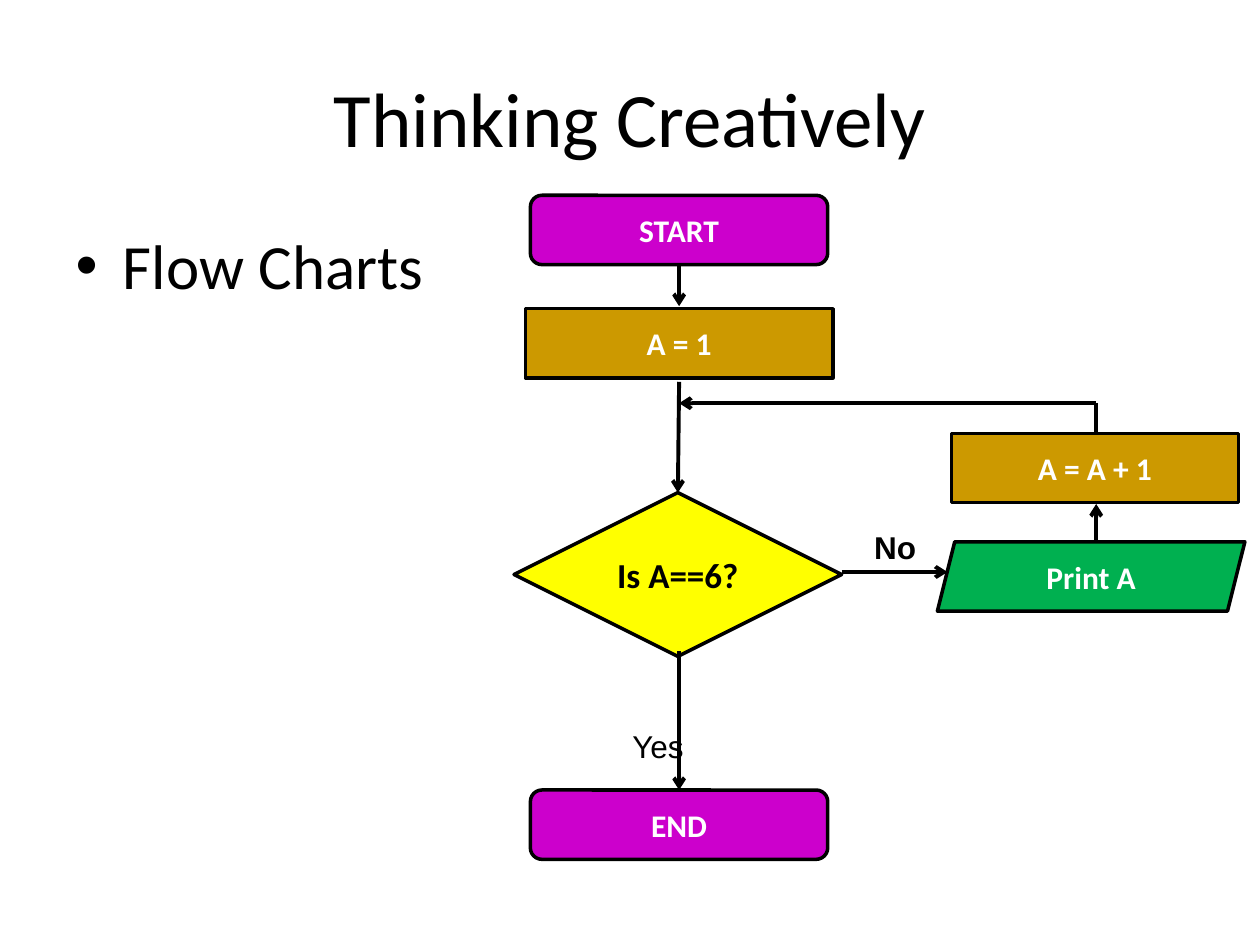
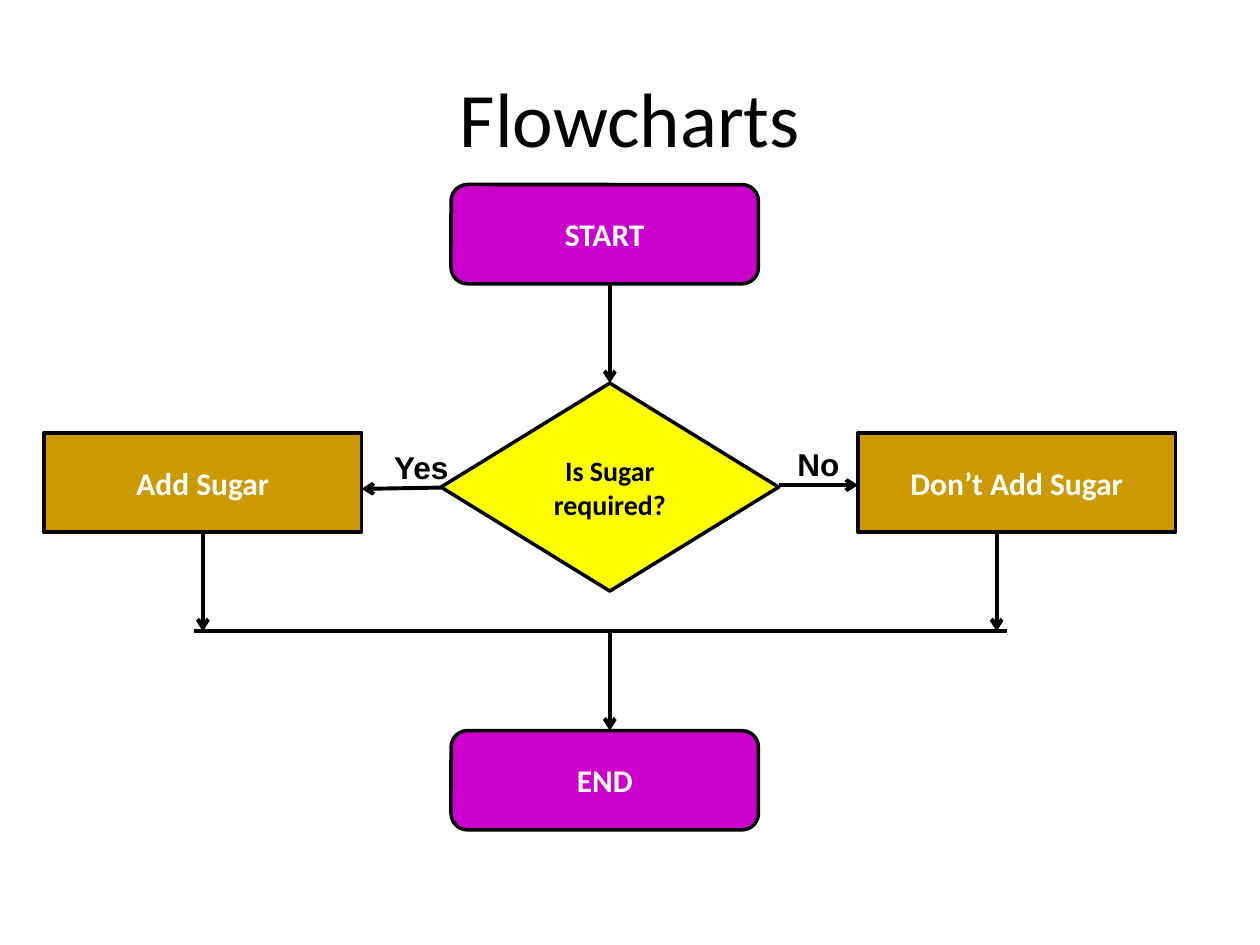
from dataclasses import dataclass

from lxml import etree
from pptx import Presentation
from pptx.dml.color import RGBColor
from pptx.enum.shapes import MSO_CONNECTOR, MSO_SHAPE
from pptx.enum.text import MSO_ANCHOR, MSO_AUTO_SIZE, PP_ALIGN
from pptx.oxml.ns import qn
from pptx.util import Inches, Pt

STRAIGHT = MSO_CONNECTOR.STRAIGHT
ROUNDED, RECTANGLE = MSO_SHAPE.ROUNDED_RECTANGLE, MSO_SHAPE.RECTANGLE
DIAMOND, PARALLELOGRAM = MSO_SHAPE.DIAMOND, MSO_SHAPE.PARALLELOGRAM
MIDDLE, CENTER, LEFT = MSO_ANCHOR.MIDDLE, PP_ALIGN.CENTER, PP_ALIGN.LEFT
FIT_TEXT = MSO_AUTO_SIZE.SHAPE_TO_FIT_TEXT

SLIDE_WIDTH, SLIDE_HEIGHT = Inches(10), Inches(7.5)
COLUMNS, ROWS = 100, 75
BULLETED_LAYOUT, TITLE_ONLY_LAYOUT = 1, 5


@dataclass(frozen=True)
class Theme:
    ink: str = "000000"
    paper: str = "FFFFFF"
    terminal: str = "CC00CC"
    process: str = "CC9900"
    decision: str = "FFFF00"
    output: str = "00B050"
    font: str = "Calibri"
    label_font: str = "Arial"
    title_size: float = 44
    body_size: float = 36
    step_size: float = 18
    question_size: float = 20
    long_question_size: float = 16
    outline: float = 2
    flow_line: float = 2.25


THEME = Theme()


@dataclass(frozen=True)
class StepKind:
    outline: MSO_SHAPE
    fill: str
    ink: str = THEME.paper
    slant: float | None = None


TERMINAL = StepKind(ROUNDED, THEME.terminal)
PROCESS = StepKind(PARALLELOGRAM, THEME.process, slant=0)
INCREMENT = StepKind(RECTANGLE, THEME.process)
OUTPUT = StepKind(PARALLELOGRAM, THEME.output)
DECISION = StepKind(DIAMOND, THEME.decision, THEME.ink)


@dataclass(frozen=True)
class Step:
    """A flowchart box, placed by its middle column and its top row."""
    kind: StepKind
    text: str
    middle: float
    top: float
    width: float
    height: float
    size: float = THEME.step_size


@dataclass(frozen=True)
class Flow:
    start: tuple[float, float]
    end: tuple[float, float]
    arrow: bool = True


@dataclass(frozen=True)
class Answer:
    text: str
    left: float
    top: float
    width: float
    bold: bool = True
    wrap: bool = True


@dataclass(frozen=True)
class Chart:
    title: str
    steps: list[Step]
    flows: list[Flow]
    answers: list[Answer]
    bullet: str = ""


def across(columns: float) -> int:
    return round(SLIDE_WIDTH * columns / COLUMNS)


def down(rows: float) -> int:
    return round(SLIDE_HEIGHT * rows / ROWS)


def place(shape, left: float, top: float, width: float, height: float) -> None:
    shape.left, shape.top = across(left), down(top)
    shape.width, shape.height = across(width), down(height)


def write(shape, text: str, size: float, color: str = THEME.ink,
          font: str = THEME.font, bold: bool = False, align=LEFT) -> None:
    shape.text_frame.text = text
    paragraph = shape.text_frame.paragraphs[0]
    paragraph.alignment = align
    paragraph.font.name, paragraph.font.size = font, Pt(size)
    paragraph.font.bold = bold
    paragraph.font.color.rgb = RGBColor.from_string(color)


def ink_line(line, width: float) -> None:
    line.color.rgb = RGBColor.from_string(THEME.ink)
    line.width = Pt(width)


def draw_step(slide, step: Step) -> None:
    box = slide.shapes.add_shape(
        step.kind.outline, across(step.middle - step.width / 2), down(step.top),
        across(step.width), down(step.height))
    if step.kind.slant is not None:
        box.adjustments[0] = step.kind.slant
    box.shadow.inherit = False
    box.fill.solid()
    box.fill.fore_color.rgb = RGBColor.from_string(step.kind.fill)
    ink_line(box.line, THEME.outline)
    box.text_frame.word_wrap = True
    box.text_frame.vertical_anchor = MIDDLE
    write(box, step.text, step.size, step.kind.ink, bold=True, align=CENTER)


def draw_flow(slide, flow: Flow) -> None:
    (x1, y1), (x2, y2) = flow.start, flow.end
    connector = slide.shapes.add_connector(
        STRAIGHT, across(x1), down(y1), across(x2), down(y2))
    ink_line(connector.line, THEME.flow_line)
    properties = connector._element.spPr
    if flow.arrow:
        etree.SubElement(properties.find(qn("a:ln")), qn("a:tailEnd"), type="arrow")
    etree.SubElement(properties, qn("a:effectLst"))


def draw_answer(slide, answer: Answer) -> None:
    label = slide.shapes.add_textbox(
        across(answer.left), down(answer.top), across(answer.width), down(4))
    label.text_frame.word_wrap = answer.wrap
    label.text_frame.auto_size = FIT_TEXT
    write(label, answer.text, THEME.step_size, font=THEME.label_font,
          bold=answer.bold)


def draw_chart(presentation, chart: Chart) -> None:
    layout = BULLETED_LAYOUT if chart.bullet else TITLE_ONLY_LAYOUT
    slide = presentation.slides.add_slide(presentation.slide_layouts[layout])
    title = slide.shapes.title
    place(title, 5, 3, 90, 12.5)
    title.text_frame.vertical_anchor = MIDDLE
    write(title, chart.title, THEME.title_size, align=CENTER)
    if chart.bullet:
        body = slide.placeholders[1]
        place(body, 5, 17.5, 90, 49.5)
        write(body, chart.bullet, THEME.body_size)
    for step in chart.steps:
        draw_step(slide, step)
    for flow in chart.flows:
        draw_flow(slide, flow)
    for answer in chart.answers:
        draw_answer(slide, answer)


def counting_chart() -> Chart:
    main, loop = 53.9, 87
    height = 5.5
    rejoin = 32
    return Chart(
        "Thinking Creatively",
        bullet="Flow Charts",
        steps=[
            Step(TERMINAL, "START", main, 15.5, 23.6, height),
            Step(PROCESS, "A = 1", main, 24.5, 24.4, height),
            Step(DECISION, "Is A==6?", main - 0.1, 39.1, 26, 13,
                 THEME.question_size),
            Step(OUTPUT, "Print A", loop - 0.4, 43, 24.4, height),
            Step(INCREMENT, "A = A + 1", loop - 0.1, 34.4, 22.8, height),
            Step(TERMINAL, "END", main, 62.7, 23.6, height),
        ],
        flows=[
            Flow((main, 21), (main, 24.3)),
            Flow((main, 30.3), (main - 0.1, 39.1)),
            Flow((66.8, 45.4), (75.2, 45.4)),
            Flow((loop, 43), (loop, 40)),
            Flow((loop, rejoin), (loop, 34.4), arrow=False),
            Flow((loop, rejoin), (main, rejoin)),
            Flow((main, 51.7), (main, 62.7)),
        ],
        answers=[
            Answer("No", 68.4, 41.4, 6.3),
            Answer("Yes", 49.2, 57.2, 10.2, bold=False),
        ],
    )


def sugar_chart() -> Chart:
    pitch = 7.88

    def row(steps_down: float) -> float:
        return 14.65 + pitch * steps_down

    main, add, skip = 48.4, 16.1, 80.7
    skip_exit = 79.1
    merge = row(4.5)
    return Chart(
        "Flowcharts",
        steps=[
            Step(TERMINAL, "START", main - 0.4, row(0), 24.4, pitch),
            Step(DECISION, "Is Sugar required?", main, row(2), 26.8, 16.5,
                 THEME.long_question_size),
            Step(PROCESS, "Add Sugar", add, row(2.5), 25.2, pitch),
            Step(PROCESS, "Don’t Add Sugar", skip, row(2.5), 25.2, pitch),
            Step(TERMINAL, "END", main - 0.4, row(5.5), 24.4, pitch),
        ],
        flows=[
            Flow((main, row(1)), (main, row(2))),
            Flow((35, 38.7), (28.7, 38.8)),
            Flow((61.8, 38.5), (68.1, 38.5)),
            *(Flow((x, row(3.5)), (x, merge)) for x in (add, skip_exit)),
            Flow((79.9, merge), (15.4, merge), arrow=False),
            Flow((main, merge), (main, row(5.5))),
        ],
        answers=[
            Answer("Yes", 30.3, 35.1, 6.4, wrap=False),
            Answer("No", 62.3, 34.8, 5.4, wrap=False),
        ],
    )


def main() -> None:
    presentation = Presentation()
    presentation.slide_width, presentation.slide_height = SLIDE_WIDTH, SLIDE_HEIGHT
    for chart in (counting_chart(), sugar_chart()):
        draw_chart(presentation, chart)
    presentation.save("out.pptx")


if __name__ == "__main__":
    main()
